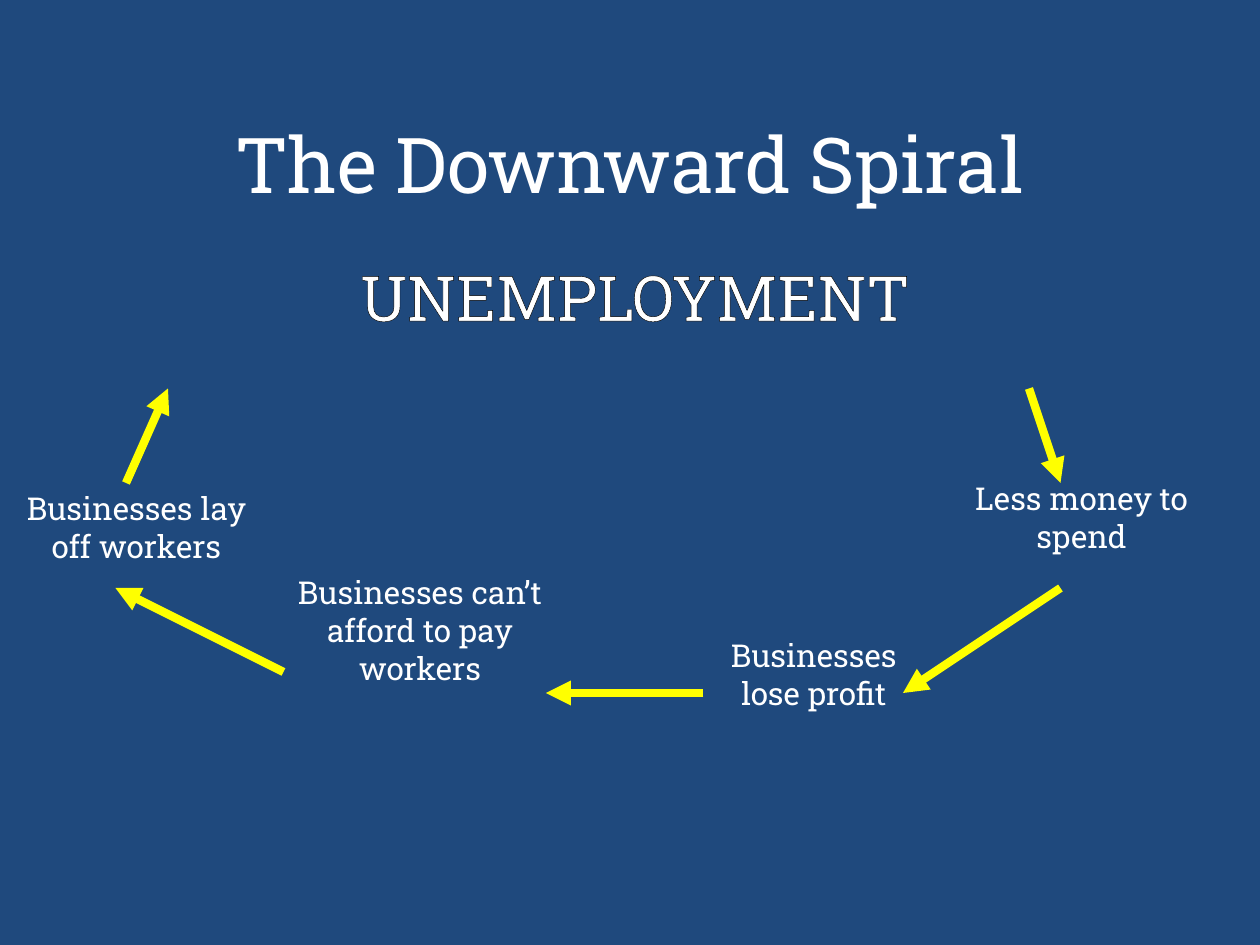
from lxml import etree
from pptx import Presentation
from pptx.dml.color import RGBColor
from pptx.enum import shapes, text
from pptx.oxml import ns
from pptx.util import Pt

COLORS = {"background": "1F497D", "text": "FFFFFF", "arrow": "FFFF00", "outline": "000000"}
FONT = "Roboto Slab"

# Steps of the spiral: wording and box (left, top, width, height) in points
STEPS = [
    ("Less money to spend", (546, 270, 144, 65)),
    ("Businesses lose profit", (402, 360, 126, 65)),
    ("Businesses can’t afford to pay workers", (162, 324, 156, 94)),
    ("Businesses lay off workers", (0, 276, 156, 65)),
]
# Arrows run clockwise, from and to in points
ARROWS = [
    ((588, 222), (606, 276)),
    ((606, 336), (516, 396)),
    ((402, 396), (312, 396)),
    ((162, 384), (66, 336)),
    ((72, 276), (96, 222)),
]


def rgb(name):
    return RGBColor.from_string(COLORS[name])


def write(sp, wording, size, anchor=text.MSO_ANCHOR.TOP, wrap=True, outline=None):
    """Put one centred paragraph into a shape; outline is a line width in points."""
    tf = sp.text_frame
    tf.word_wrap = wrap
    tf.vertical_anchor = anchor
    p = tf.paragraphs[0]
    p.alignment = text.PP_ALIGN.CENTER
    r = p.add_run()
    r.text = wording
    r.font.name = FONT
    r.font.size = Pt(size)
    r.font.color.rgb = rgb("text")
    if outline:
        ln = etree.Element(ns.qn("a:ln"), w=str(Pt(outline)))
        fill = etree.SubElement(ln, ns.qn("a:solidFill"))
        etree.SubElement(fill, ns.qn("a:srgbClr"), val=COLORS["outline"])
        r.font._element.insert(0, ln)


def add_title(s, box, wording):
    sp = s.shapes.title
    sp.left, sp.top, sp.width, sp.height = map(Pt, box)
    write(sp, wording, 44, anchor=text.MSO_ANCHOR.MIDDLE)


def add_heading(s, box, wording):
    write(s.shapes.add_textbox(*map(Pt, box)), wording, 36, wrap=False, outline=0.75)


def add_step(s, box, wording):
    write(s.shapes.add_textbox(*map(Pt, box)), wording, 18)


def add_arrow(s, start, end):
    sp = s.shapes.add_connector(shapes.MSO_CONNECTOR.STRAIGHT, *map(Pt, start + end))
    sp.line.color.rgb = rgb("arrow")
    sp.line.width = Pt(4.75)
    etree.SubElement(sp.line._get_or_add_ln(), ns.qn("a:tailEnd"), type="triangle")
    etree.SubElement(sp._element.spPr, ns.qn("a:effectLst"))


def main():
    prs = Presentation()
    prs.slide_width, prs.slide_height = Pt(720), Pt(540)
    s = prs.slides.add_slide(prs.slide_layouts[5])
    s.background.fill.solid()
    s.background.fill.fore_color.rgb = rgb("background")

    add_title(s, (54, 48, 612, 90), "The Downward Spiral")
    for wording, box in STEPS:
        add_step(s, box, wording)
    for start, end in ARROWS:
        add_arrow(s, start, end)
    add_heading(s, (48, 144, 630, 60), "UNEMPLOYMENT")
    prs.save("out.pptx")


if __name__ == "__main__":
    main()
